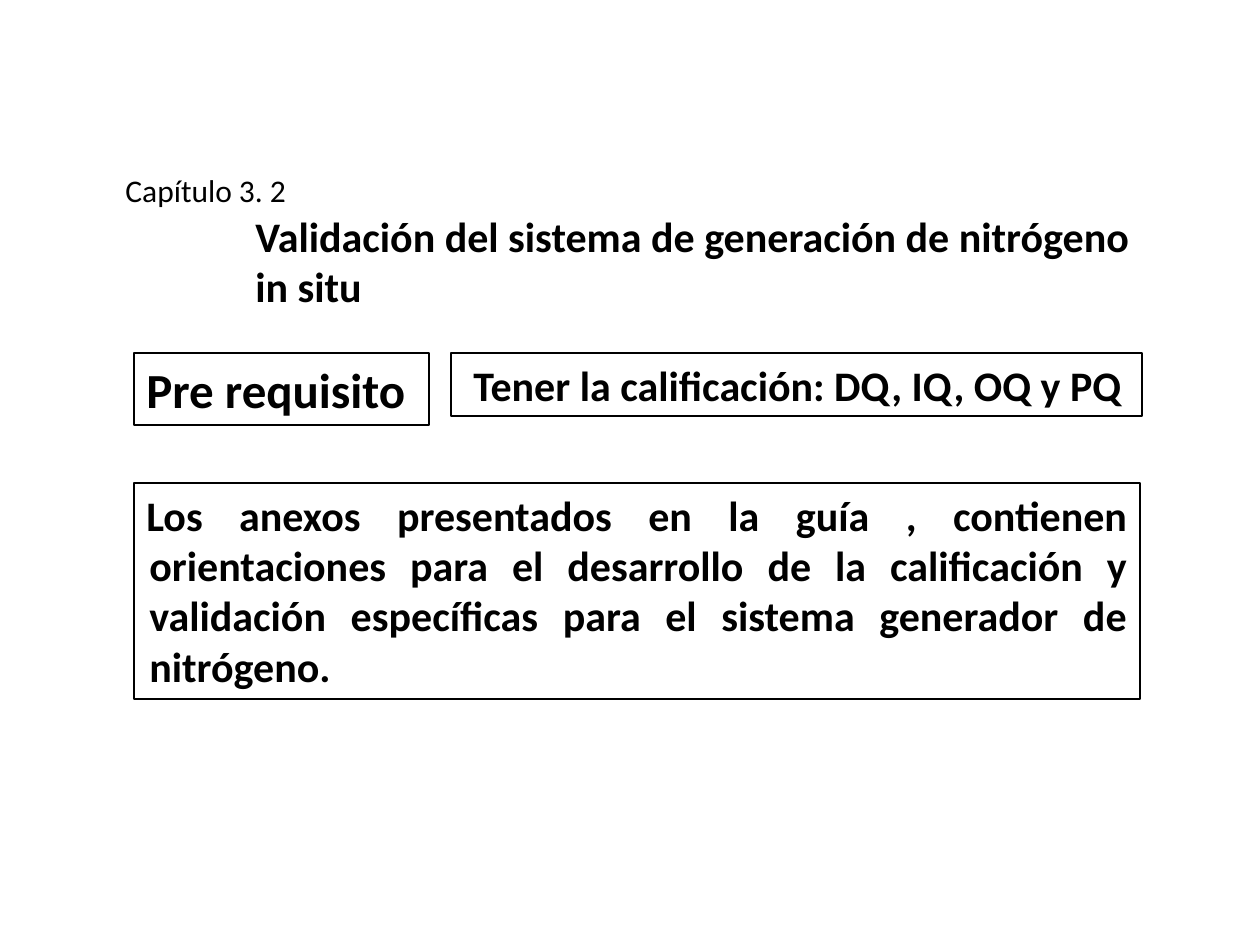
from pptx import Presentation, util as u
from pptx.dml.color import RGBColor
from pptx.enum import shapes, text

SCALE = u.Inches(1) // 126
LEFT = 134
ROW = 353
INK = "000000"
PAPER = "FFFFFF"


def px(n):
    return u.Emu(n * SCALE)


def tint(fmt, color):
    fmt.solid()
    fmt.fore_color.rgb = RGBColor.from_string(color)


def write(shape, words, size, bold=True, align=text.PP_ALIGN.LEFT, left=0, first=0):
    frame = shape.text_frame
    frame.word_wrap = True
    frame.vertical_anchor = text.MSO_ANCHOR.TOP
    para = frame.paragraphs[0]
    para.text = words
    para.alignment = align
    props = para._p.get_or_add_pPr()
    props.set("marL", str(px(left)))
    props.set("indent", str(px(first)))
    font = para.font
    font.name = "Calibri"
    font.size = u.Pt(size)
    font.bold = bold
    tint(font.fill, INK)


def label(slide, area, words, size, **style):
    box = slide.shapes.add_textbox(*map(px, area))
    write(box, words, size, **style)


def frame(slide, area, words, size, **style):
    box = slide.shapes.add_shape(shapes.MSO_SHAPE.RECTANGLE, *map(px, area))
    box.shadow.inherit = False
    tint(box.fill, PAPER)
    tint(box.line.fill, INK)
    box.line.width = u.Pt(1)
    write(box, words, size, **style)


def main():
    deck = Presentation()
    deck.slide_width, deck.slide_height = px(1260), px(945)
    slide = deck.slides.add_slide(deck.slide_layouts[6])
    label(slide, (243, 204, 924, 115),
          "Validación del sistema de generación de nitrógeno in situ", 24)
    frame(slide, (451, ROW, 691, 63),
          "Tener la calificación: DQ, IQ, OQ y PQ", 24, left=10)
    frame(slide, (LEFT, 483, 1006, 216),
          "Los anexos presentados en la guía , contienen orientaciones para el "
          "desarrollo de la calificación y validación específicas para el sistema "
          "generador de nitrógeno.", 24,
          align=text.PP_ALIGN.JUSTIFY, left=3, first=-3)
    label(slide, (113, 165, 350, 50), "Capítulo 3. 2", 18, bold=False)
    frame(slide, (LEFT, ROW, 295, 72), "Pre requisito", 28)
    deck.save("out.pptx")


if __name__ == "__main__":
    main()
